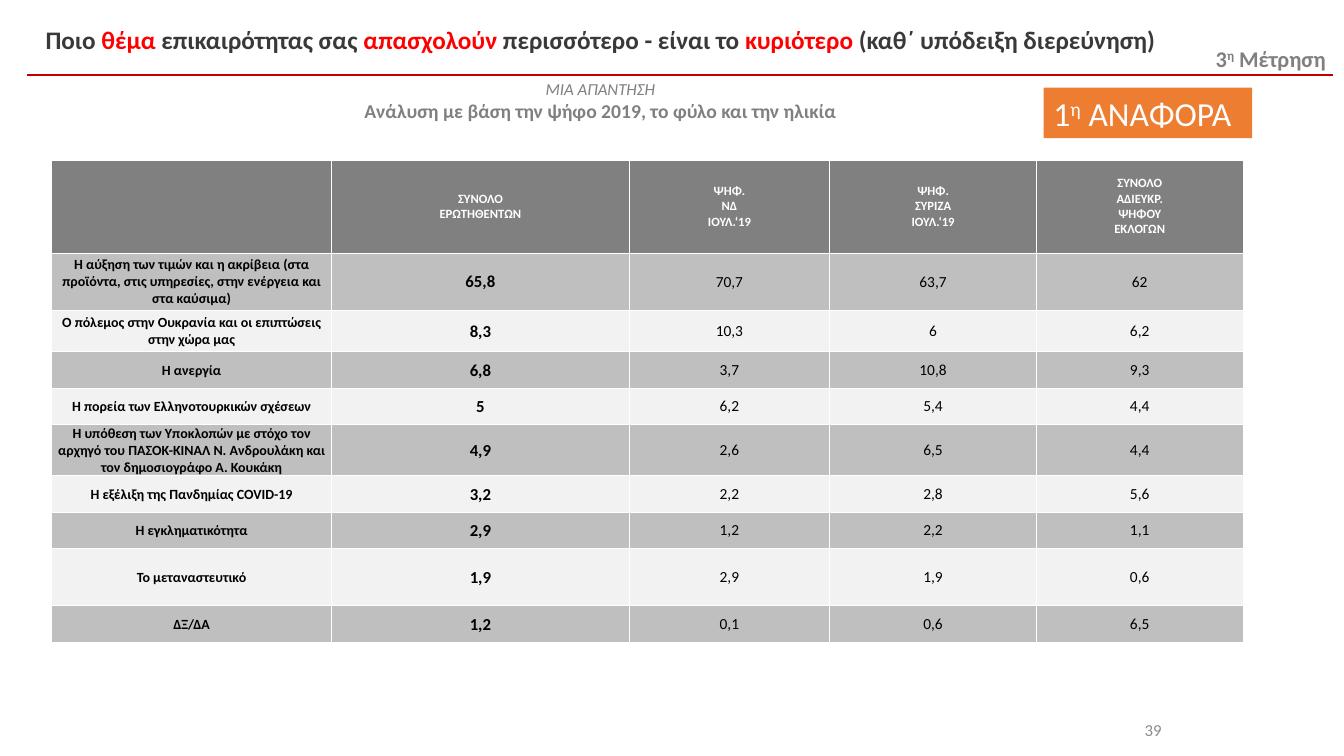
from lxml import etree
from pptx import Presentation
from pptx.dml.color import RGBColor
from pptx.enum.shapes import MSO_CONNECTOR, MSO_SHAPE
from pptx.enum.text import MSO_ANCHOR, MSO_AUTO_SIZE, PP_ALIGN
from pptx.oxml.ns import qn
from pptx.util import Inches, Pt

CENTER, LEFT, RIGHT = PP_ALIGN.CENTER, PP_ALIGN.LEFT, PP_ALIGN.RIGHT
TOP, MIDDLE = MSO_ANCHOR.TOP, MSO_ANCHOR.MIDDLE
FIT_SHAPE = MSO_AUTO_SIZE.SHAPE_TO_FIT_TEXT
RECTANGLE, STRAIGHT = MSO_SHAPE.RECTANGLE, MSO_CONNECTOR.STRAIGHT

FONT = "Calibri"
WHITE, BLACK, GREY, DARK, RED = "FFFFFF", "000000", "808080", "3B3838", "FF0000"
BANDS = ["BFBFBF", "F2F2F2"]

TITLE = [
    ("Ποιο ", DARK), ("θέμα", RED), (" επικαιρότητας σας ", DARK),
    ("απασχολούν", RED), (" περισσότερο - είναι το ", DARK),
    ("κυριότερο", RED), (" (καθ΄ υπόδειξη διερεύνηση)", DARK),
]
HEADERS = [
    [],
    ["ΣΥΝΟΛΟ", "ΕΡΩΤΗΘΕΝΤΩΝ"],
    ["ΨΗΦ.", "ΝΔ", "ΙΟΥΛ.‘19"],
    ["ΨΗΦ.", "ΣΥΡΙΖΑ", "ΙΟΥΛ.‘19"],
    ["ΣΥΝΟΛΟ", "ΑΔΙΕΥΚΡ.", "ΨΗΦΟΥ", "ΕΚΛΟΓΩΝ"],
]
ISSUES = [
    ["Η αύξηση των τιμών και η ακρίβεια (στα προϊόντα, στις υπηρεσίες, "
     "στην ενέργεια και στα καύσιμα)", "65,8", "70,7", "63,7", "62"],
    ["Ο πόλεμος στην Ουκρανία και οι επιπτώσεις στην χώρα μας",
     "8,3", "10,3", "6", "6,2"],
    ["Η ανεργία", "6,8", "3,7", "10,8", "9,3"],
    ["Η πορεία των Ελληνοτουρκικών σχέσεων", "5", "6,2", "5,4", "4,4"],
    ["Η υπόθεση των Υποκλοπών με στόχο τον αρχηγό του ΠΑΣΟΚ-ΚΙΝΑΛ "
     "Ν. Ανδρουλάκη και τον δημοσιογράφο Α. Κουκάκη",
     "4,9", "2,6", "6,5", "4,4"],
    ["Η εξέλιξη της Πανδημίας COVID-19", "3,2", "2,2", "2,8", "5,6"],
    ["Η εγκληματικότητα", "2,9", "1,2", "2,2", "1,1"],
    ["Το μεταναστευτικό", "1,9", "2,9", "1,9", "0,6"],
    ["ΔΞ/ΔΑ", "1,2", "0,1", "0,6", "6,5"],
]
COLUMN_WIDTHS = [2.78, 2.95, 1.99, 2.05, 2.05]
ROW_HEIGHTS = [0.92, 0.57, 0.41, 0.36, 0.36, 0.51, 0.36, 0.36, 0.57, 0.36]
COLUMN_STYLES = [(10, True), (12, True)] + [(11, False)] * 3


def rgb(value):
    return RGBColor.from_string(value)


def style(para, size, color, bold=False, italic=False, align=CENTER):
    para.alignment = align
    font = para.font
    font.name, font.size, font.bold, font.italic = FONT, Pt(size), bold, italic
    font.color.rgb = rgb(color)


def add_ordinal(frame, number, noun, size, color, bold):
    """Write a number with a raised Greek ordinal ending, then a noun."""
    frame.word_wrap = False
    frame.auto_size = FIT_SHAPE
    frame.vertical_anchor = TOP
    para = frame.paragraphs[0]
    for text in (number, "η", " " + noun):
        span = para.add_run()
        span.text = text
        if text == "η":
            span._r.get_or_add_rPr().set("baseline", "30000")
    style(para, size, color, bold, align=LEFT)


def add_box(page, left, top, width, height):
    return page.shapes.add_textbox(
        Inches(left), Inches(top), Inches(width), Inches(height))


def add_rectangle(page, left, top, width, height, fill):
    shape = page.shapes.add_shape(
        RECTANGLE, Inches(left), Inches(top), Inches(width), Inches(height))
    shape.shadow.inherit = False
    shape.fill.solid()
    shape.fill.fore_color.rgb = rgb(fill)
    shape.line.fill.background()
    return shape


def add_rule(page, left, right, y, color):
    rule = page.shapes.add_connector(
        STRAIGHT, Inches(left), Inches(y), Inches(right), Inches(y))
    rule.line.color.rgb = rgb(color)
    rule.line.width = Pt(1.5)
    etree.SubElement(rule._element.spPr, qn("a:effectLst"))


def add_heading(page):
    frame = add_box(page, 0.18, 0.16, 11.55, 1.11).text_frame
    frame.word_wrap = True
    title = frame.paragraphs[0]
    for text, color in TITLE:
        span = title.add_run()
        span.text = text
        span.font.color.rgb = rgb(color)
    style(title, 18, DARK, bold=True)
    title.line_spacing = 1.1

    note = frame.add_paragraph()
    note.text = "ΜΙΑ ΑΠΑΝΤΗΣΗ"
    style(note, 12, GREY, italic=True)
    note.line_spacing = 1.1
    note.space_before = Pt(16)

    basis = frame.add_paragraph()
    basis.text = "Ανάλυση με βάση την ψήφο 2019, το φύλο και την ηλικία"
    style(basis, 14, GREY, bold=True)


def set_borders(cell, color, width):
    properties = cell._tc.get_or_add_tcPr()
    for index, side in enumerate(("a:lnL", "a:lnR", "a:lnT", "a:lnB")):
        line = etree.Element(qn(side), w=str(Pt(width)))
        fill = etree.SubElement(line, qn("a:solidFill"))
        etree.SubElement(fill, qn("a:srgbClr"), val=color)
        properties.insert(index, line)


def fill_cell(cell, lines, fill, size, color, bold):
    cell.fill.solid()
    cell.fill.fore_color.rgb = rgb(fill)
    set_borders(cell, WHITE, 0.5)
    cell.vertical_anchor = MIDDLE
    cell.text = "\n".join(lines)
    for para in cell.text_frame.paragraphs:
        style(para, size, color, bold)


def add_issue_table(page):
    table = page.shapes.add_table(
        len(ROW_HEIGHTS), len(COLUMN_WIDTHS), Inches(0.51), Inches(1.59),
        Inches(sum(COLUMN_WIDTHS)), Inches(sum(ROW_HEIGHTS))).table
    for column, width in zip(table.columns, COLUMN_WIDTHS):
        column.width = Inches(width)
    for row, height in zip(table.rows, ROW_HEIGHTS):
        row.height = Inches(height)
    for column, lines in enumerate(HEADERS):
        fill_cell(table.cell(0, column), lines, GREY, 9, WHITE, True)
    for row, issue in enumerate(ISSUES):
        for column, text in enumerate(issue):
            cell = table.cell(row + 1, column)
            cell.margin_left = cell.margin_right = cell.margin_top = Inches(0.01)
            cell.margin_bottom = 0
            size, bold = COLUMN_STYLES[column]
            fill_cell(cell, [text], BANDS[row % 2], size, BLACK, bold)


def add_page_number(page, number):
    shape = add_rectangle(page, 10.98, 7.04, 0.64, 0.4, WHITE)
    shape.text_frame.vertical_anchor = MIDDLE
    para = shape.text_frame.paragraphs[0]
    para.text = number
    style(para, 12, "8C8C8C", align=RIGHT)


def main():
    deck = Presentation()
    deck.slide_width, deck.slide_height = Inches(13.33), Inches(7.5)
    page = deck.slides.add_slide(deck.slide_layouts[6])
    add_rule(page, 0.27, 13.22, 0.74, "C00000")
    wave = add_box(page, 11.96, 0.4, 1.37, 0.37)
    add_ordinal(wave.text_frame, "3", "Μέτρηση", 16, GREY, True)
    add_heading(page)
    add_page_number(page, "39")
    add_issue_table(page)
    badge = add_rectangle(page, 10.35, 0.87, 2.07, 0.5, "ED7D31")
    add_ordinal(badge.text_frame, "1", "ΑΝΑΦΟΡΑ", 24, WHITE, False)
    deck.save("out.pptx")


if __name__ == "__main__":
    main()
